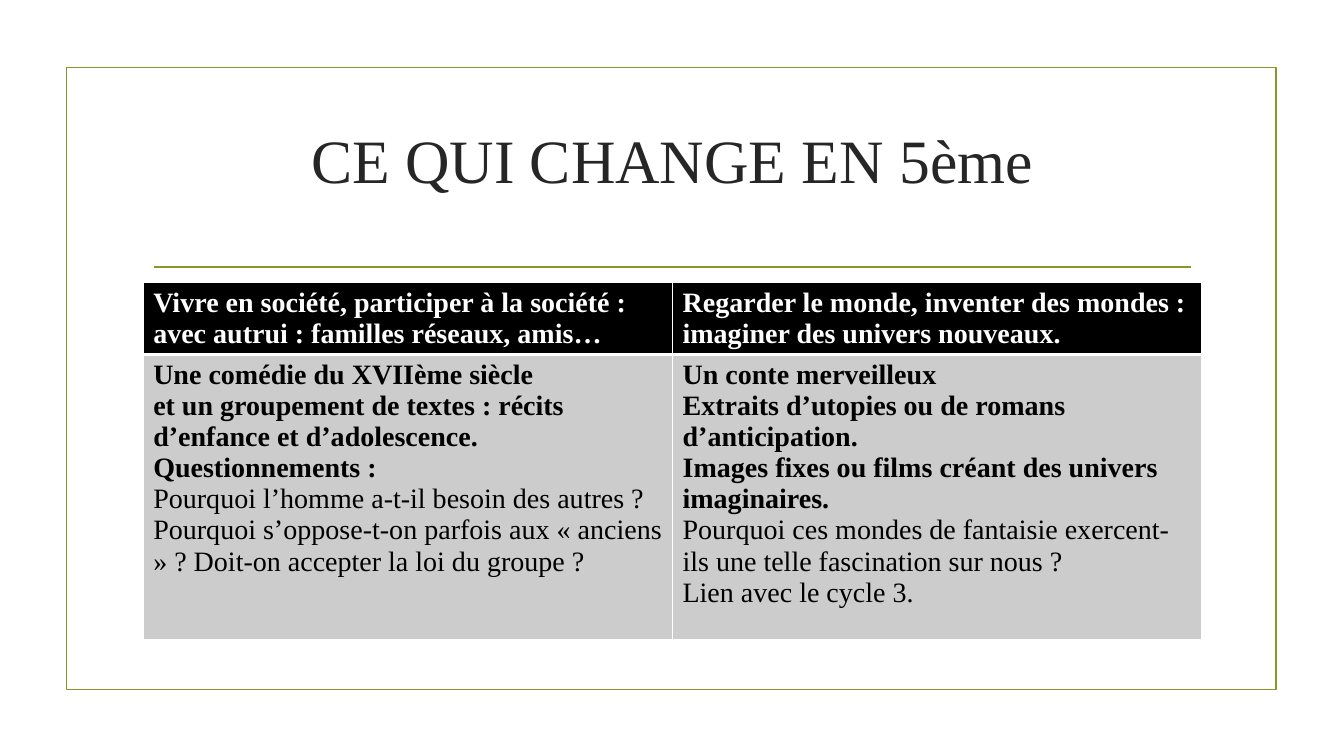
"""Build the slide presenting what changes in 5ème."""
from dataclasses import dataclass

import lxml.etree
import pptx
import pptx.dml.color
import pptx.enum.shapes
import pptx.enum.text
import pptx.oxml.ns
import pptx.presentation
import pptx.shapes.connector
import pptx.slide
import pptx.table
import pptx.util

EMU_PER_PX = 9144
FONT = "Times New Roman"
GREEN = "83992A"
WHITE = "FFFFFF"
BLACK = "000000"
GREY = "CCCCCC"
DARK = "262626"
COLUMN_WIDTH = 525
THIN = 1
THICK = 3


@dataclass(frozen=True)
class Line:
    text: str
    bold: bool = True


@dataclass(frozen=True)
class Row:
    height: int
    fill: str
    color: str
    borders: dict[str, int]
    cells: tuple[tuple[Line, ...], ...]


ROWS = (
    Row(70, BLACK, WHITE, {"lnL": THIN, "lnR": THIN, "lnT": THIN, "lnB": THICK}, (
        (Line("Vivre en société, participer à la société : avec autrui : familles réseaux, amis…"),),
        (Line("Regarder le monde, inventer des mondes : imaginer des univers nouveaux."),),
    )),
    Row(283, GREY, BLACK, {"lnL": THIN, "lnR": THIN, "lnT": THICK, "lnB": THIN}, (
        (
            Line("Une comédie du XVIIème siècle"),
            Line("et un groupement de textes : récits d’enfance et d’adolescence."),
            Line("Questionnements :"),
            Line("Pourquoi l’homme a-t-il besoin des autres ? Pourquoi s’oppose-t-on parfois aux "
                 "« anciens » ? Doit-on accepter la loi du groupe ?", False),
        ),
        (
            Line("Un conte merveilleux"),
            Line("Extraits d’utopies ou de romans d’anticipation."),
            Line("Images fixes ou films créant des univers imaginaires."),
            Line("Pourquoi ces mondes de fantaisie exercent-ils une telle fascination sur nous ?", False),
            Line("Lien avec le cycle 3.", False),
        ),
    )),
)


def px(length: int) -> pptx.util.Emu:
    return pptx.util.Emu(length * EMU_PER_PX)


def rgb(color: str) -> pptx.dml.color.RGBColor:
    return pptx.dml.color.RGBColor.from_string(color)


def apply(target: object, values: dict[str, object]) -> None:
    for name, value in values.items():
        setattr(target, name, value)


def format_font(font: object, size: int, color: str, bold: bool) -> None:
    apply(font, {"name": FONT, "size": pptx.util.Pt(size), "bold": bold})
    font.color.rgb = rgb(color)


def format_line(line: object) -> None:
    line.color.rgb = rgb(GREEN)
    line.width = pptx.util.Pt(1.25)


def draw_title(slide: pptx.slide.Slide, text: str) -> None:
    title = slide.shapes.title
    apply(title, {"left": px(142), "top": px(107), "width": px(1050), "height": px(101)})
    frame = title.text_frame
    frame.text = text
    apply(frame, {
        "word_wrap": True,
        "auto_size": pptx.enum.text.MSO_AUTO_SIZE.NONE,
        "vertical_anchor": pptx.enum.text.MSO_ANCHOR.MIDDLE,
    })
    paragraph = frame.paragraphs[0]
    paragraph.alignment = pptx.enum.text.PP_ALIGN.CENTER
    format_font(paragraph.runs[0].font, 44, DARK, False)


def draw_frame(slide: pptx.slide.Slide) -> None:
    rectangle = slide.shapes.add_shape(
        pptx.enum.shapes.MSO_SHAPE.RECTANGLE, px(66), px(67), px(1200), px(617))
    rectangle.shadow.inherit = False
    rectangle.fill.background()
    format_line(rectangle.line)


def draw_rule(slide: pptx.slide.Slide) -> None:
    rule = slide.shapes.add_connector(
        pptx.enum.shapes.MSO_CONNECTOR.STRAIGHT, px(153), px(265), px(1181), px(265))
    format_line(rule.line)
    properties = rule._element.spPr
    lxml.etree.SubElement(properties, pptx.oxml.ns.qn("a:effectLst"))


def add_border(cell: pptx.table._Cell, side: str, width: int) -> None:
    properties = cell._tc.get_or_add_tcPr()
    border = lxml.etree.SubElement(
        properties, pptx.oxml.ns.qn(f"a:{side}"), w=str(pptx.util.Pt(width)))
    fill = lxml.etree.SubElement(border, pptx.oxml.ns.qn("a:solidFill"))
    lxml.etree.SubElement(fill, pptx.oxml.ns.qn("a:srgbClr"), val=WHITE)


def fill_cell(cell: pptx.table._Cell, row: Row, lines: tuple[Line, ...]) -> None:
    for side, width in row.borders.items():
        add_border(cell, side, width)
    cell.fill.solid()
    cell.fill.fore_color.rgb = rgb(row.fill)
    cell.text_frame.text = "\n".join(line.text for line in lines)
    for paragraph, line in zip(cell.text_frame.paragraphs, lines):
        format_font(paragraph.runs[0].font, 20, row.color, line.bold)


def draw_table(slide: pptx.slide.Slide) -> None:
    column_count = len(ROWS[0].cells)
    table = slide.shapes.add_table(
        len(ROWS), column_count, px(142), px(280),
        px(column_count * COLUMN_WIDTH), px(sum(row.height for row in ROWS))).table
    for row_index, row in enumerate(ROWS):
        table.rows[row_index].height = px(row.height)
        for column_index, lines in enumerate(row.cells):
            fill_cell(table.cell(row_index, column_index), row, lines)


def build() -> pptx.presentation.Presentation:
    presentation = pptx.Presentation()
    apply(presentation, {"slide_width": px(1333), "slide_height": px(750)})
    slide = presentation.slides.add_slide(presentation.slide_layouts.get_by_name("Title Only"))
    draw_frame(slide)
    draw_rule(slide)
    draw_title(slide, "CE QUI CHANGE EN 5ème")
    draw_table(slide)
    return presentation


if __name__ == "__main__":
    build().save("out.pptx")
